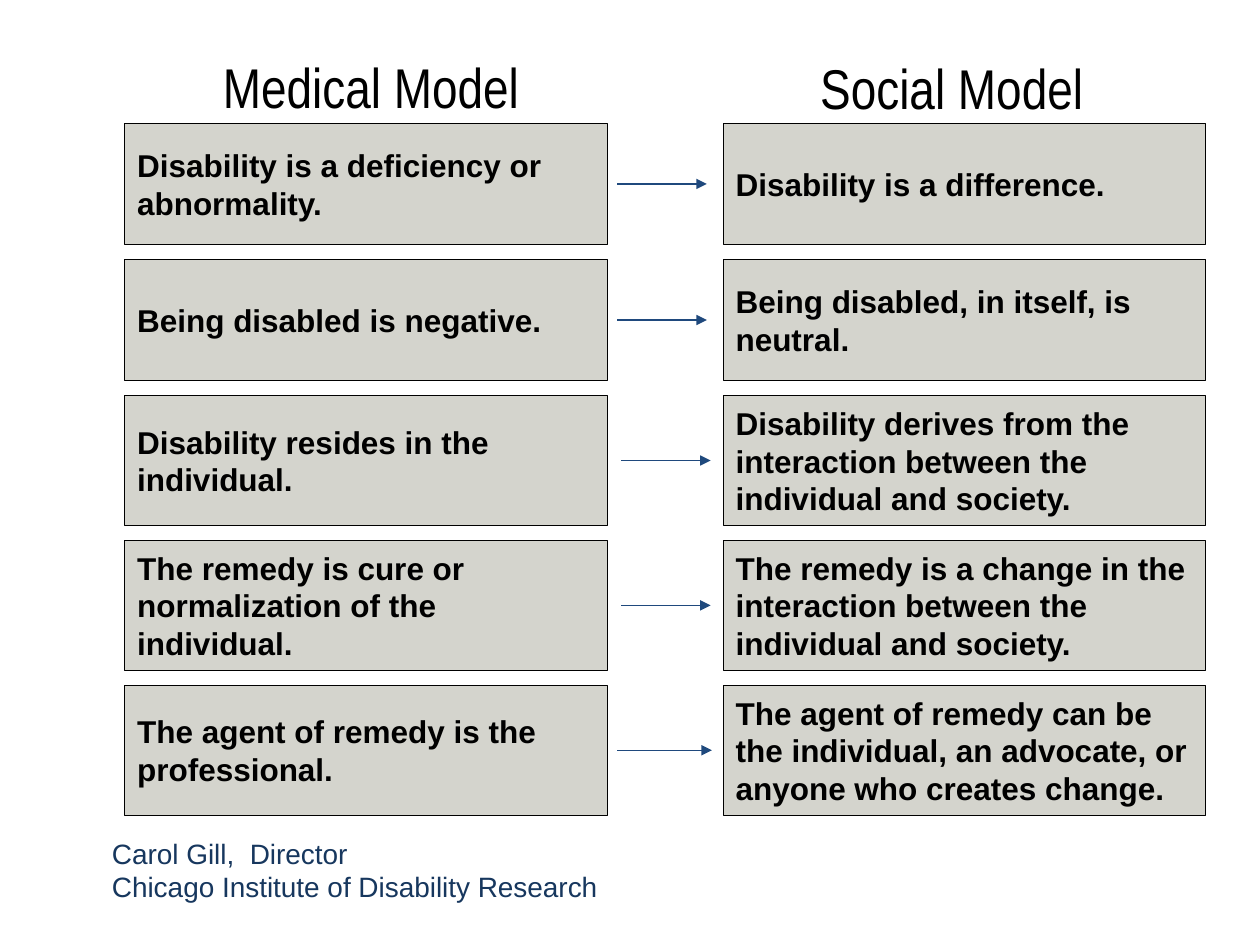
from dataclasses import dataclass

from lxml import etree
from pptx import Presentation
from pptx.dml.color import RGBColor
from pptx.enum import shapes, text
from pptx.oxml import ns
from pptx.util import Inches, Pt


@dataclass(frozen=True)
class Theme:
    black: RGBColor = RGBColor.from_string("000000")
    box: RGBColor = RGBColor.from_string("D4D4CD")
    arrow: RGBColor = RGBColor.from_string("1F497D")
    credit: RGBColor = RGBColor.from_string("17375E")
    heading_font: str = "Arial Narrow"
    body_font: str = "Arial"
    heading_size: Pt = Pt(32)
    box_size: Pt = Pt(18)
    credit_size: Pt = Pt(16)
    line: Pt = Pt(0.75)


THEME = Theme()

MEDICAL_X, SOCIAL_X, BOX_W = 0.99, 5.74, 3.83
FIRST_TOP, GAP = 0.98, 0.12

# Medical view, social view, row height, arrow start, arrow end
ROWS = [
    ("Disability is a deficiency or abnormality.",
     "Disability is a difference.", 0.96, 4.9, 5.61),
    ("Being disabled is negative.",
     "Being disabled, in itself, is neutral.", 0.96, 4.9, 5.61),
    ("Disability resides in the individual.",
     "Disability derives from the interaction between the individual and society.",
     1.03, 4.93, 5.64),
    ("The remedy is cure or normalization of the individual.",
     "The remedy is a change in the interaction between the individual and society.",
     1.03, 4.93, 5.64),
    ("The agent of remedy is the professional.",
     "The agent of remedy can be the individual, an advocate, or anyone who creates change.",
     1.03, 4.9, 5.65),
]


def write(sp, words, font, size, color, align, anchor, bold=False):
    tf = sp.text_frame
    tf.word_wrap = True
    tf.vertical_anchor = anchor
    tf.text = words
    p = tf.paragraphs[0]
    p.alignment = align
    p.font.name = font
    p.font.size = size
    p.font.bold = bold
    p.font.color.rgb = color


def add_heading(s, words, x, y, w, h, anchor):
    sp = s.shapes.add_textbox(Inches(x), Inches(y), Inches(w), Inches(h))
    write(sp, words, THEME.heading_font, THEME.heading_size, THEME.black,
          text.PP_ALIGN.CENTER, anchor)
    return sp


def add_credit(s, words):
    sp = s.shapes.add_textbox(Inches(0.79), Inches(6.58), Inches(4.56), Inches(0.64))
    write(sp, words, THEME.body_font, THEME.credit_size, THEME.credit,
          text.PP_ALIGN.LEFT, text.MSO_ANCHOR.BOTTOM)


def add_box(s, words, x, y, h):
    sp = s.shapes.add_shape(shapes.MSO_SHAPE.FLOWCHART_PROCESS,
                            Inches(x), Inches(y), Inches(BOX_W), Inches(h))
    sp.shadow.inherit = False
    sp.fill.solid()
    sp.fill.fore_color.rgb = THEME.box
    sp.line.color.rgb = THEME.black
    sp.line.width = THEME.line
    write(sp, words, THEME.body_font, THEME.box_size, THEME.black,
          text.PP_ALIGN.LEFT, text.MSO_ANCHOR.MIDDLE, bold=True)


def add_arrow(s, start, end, y):
    c = s.shapes.add_connector(shapes.MSO_CONNECTOR.STRAIGHT,
                               Inches(start), Inches(y), Inches(end), Inches(y))
    c.line.color.rgb = THEME.arrow
    c.line.width = THEME.line
    ln = c.line._get_or_add_ln()
    etree.SubElement(ln, ns.qn("a:tailEnd"), type="triangle")
    etree.SubElement(ln.getparent(), ns.qn("a:effectLst"))


def main():
    prs = Presentation()
    prs.slide_width, prs.slide_height = Inches(10), Inches(7.5)
    s = prs.slides.add_slide(prs.slide_layouts[6])

    add_heading(s, "Medical Model", 1.32, 0.37, 3.25, 0.63, text.MSO_ANCHOR.TOP)
    social = add_heading(s, "Social Model", 5.49, 0.37, 4.33, 0.64,
                         text.MSO_ANCHOR.BOTTOM)
    social.text_frame.margin_right = Inches(0.3)

    top = FIRST_TOP
    for medical_view, social_view, height, start, end in ROWS:
        add_box(s, medical_view, MEDICAL_X, top, height)
        add_box(s, social_view, SOCIAL_X, top, height)
        add_arrow(s, start, end, top + height / 2)
        top += height + GAP

    add_credit(s, "Carol Gill,  Director\vChicago Institute of Disability Research")
    prs.save("out.pptx")


if __name__ == "__main__":
    main()
